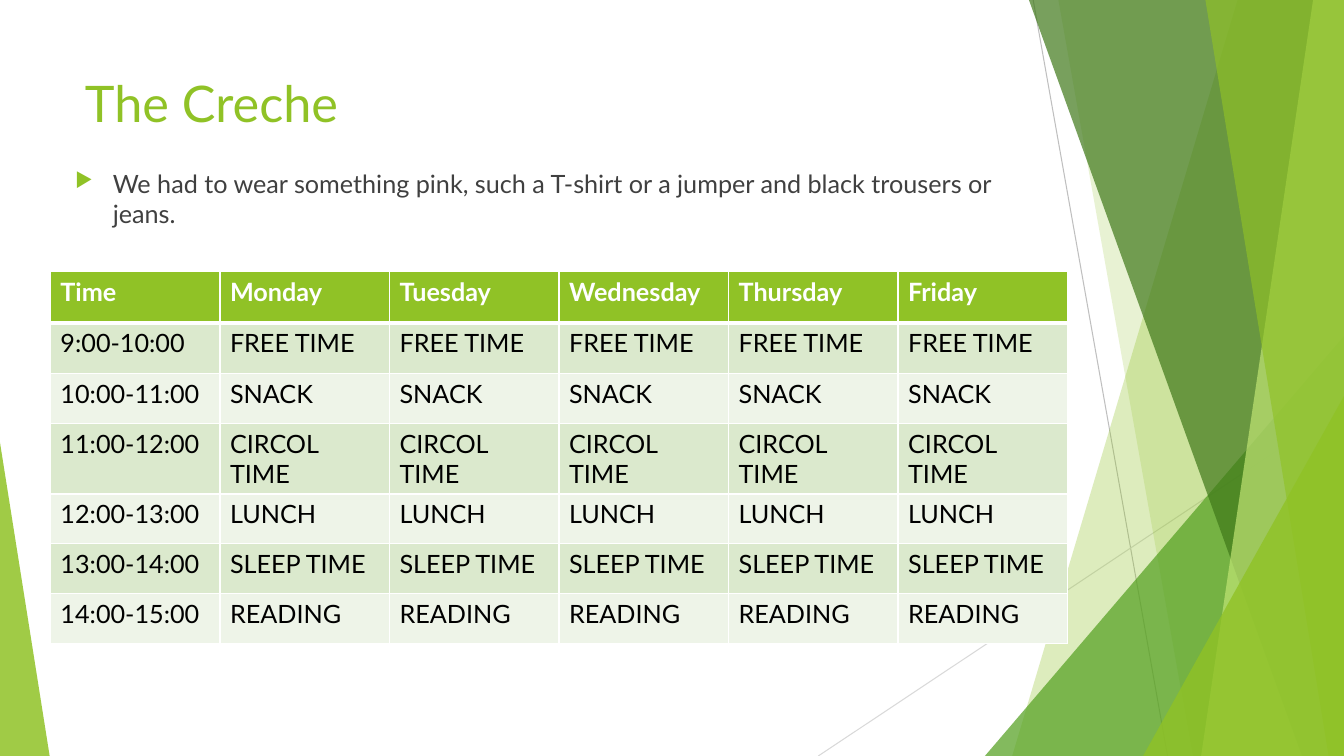
from lxml.etree import SubElement
from pptx import Presentation
from pptx.dml.color import RGBColor
from pptx.enum.shapes import MSO_CONNECTOR, MSO_SHAPE
from pptx.enum.text import MSO_ANCHOR, MSO_AUTO_SIZE, PP_ALIGN
from pptx.oxml.ns import qn
from pptx.util import Pt

FONT = "Lato"
WIDTH, HEIGHT = 960, 540

GREEN = RGBColor(0x90, 0xC2, 0x26)
MID_GREEN = RGBColor(0x54, 0xA0, 0x21)
DARK_GREEN = RGBColor(0x3F, 0x78, 0x19)
PALE_GREEN = RGBColor(0xC0, 0xE4, 0x74)
BAND_DARK = RGBColor(0xDB, 0xE9, 0xCD)
BAND_LIGHT = RGBColor(0xEE, 0xF4, 0xE8)
GREY = RGBColor(0xBF, 0xBF, 0xBF)
LIGHT_GREY = RGBColor(0xD9, 0xD9, 0xD9)
TEXT_GREY = RGBColor(0x40, 0x40, 0x40)
WHITE = RGBColor(0xFF, 0xFF, 0xFF)
BLACK = RGBColor(0, 0, 0)

DAYS = ["Monday", "Tuesday", "Wednesday", "Thursday", "Friday"]
ACTIVITIES = ["FREE TIME", "SNACK", "CIRCOL TIME", "LUNCH", "SLEEP TIME", "READING"]
FIRST_HOUR = 9
COLUMN_WIDTH = 121.1
ROW_HEIGHTS = [36.5, 36.5, 35.5, 41, 35.5, 35.5, 35.5]


def write(tf, text, size, color, bold=False):
    tf.word_wrap = True
    p = tf.paragraphs[0]
    p.alignment = PP_ALIGN.LEFT
    r = p.add_run()
    r.text = text
    font = {"name": FONT, "size": Pt(size), "bold": bold}
    for name, value in font.items():
        setattr(r.font, name, value)
    r.font.color.rgb = color
    return p


def paint(sp, color, opacity):
    sp.shadow.inherit = False
    sp.line.fill.background()
    sp.fill.solid()
    sp.fill.fore_color.rgb = color
    srgb = sp.fill._xPr.find(qn("a:solidFill"))[0]
    SubElement(srgb, qn("a:alpha"), val=str(opacity * 1000))


def add_line(s, start, end, color):
    line = s.shapes.add_connector(MSO_CONNECTOR.STRAIGHT, *map(Pt, start + end))
    line.line.color.rgb = color
    line.line.width = Pt(0.75)
    SubElement(line._element.spPr, qn("a:effectLst"))


def add_facet(s, top_x, bottom_x, color, opacity):
    """Band from a slanted left edge to the right side of the slide."""
    builder = s.shapes.build_freeform(top_x, 0, scale=Pt(1))
    builder.add_line_segments([(WIDTH, 0), (WIDTH, HEIGHT), (bottom_x, HEIGHT)])
    paint(builder.convert_to_shape(), color, opacity)


def add_corner(s, left, top, width, apex, color, opacity):
    """Triangle standing on the bottom of the slide."""
    sp = s.shapes.add_shape(MSO_SHAPE.ISOSCELES_TRIANGLE, Pt(left), Pt(top),
                            Pt(width), Pt(HEIGHT - top))
    sp.adjustments[0] = apex
    paint(sp, color, opacity)


def add_decoration(s):
    add_line(s, (738, 0), (834, HEIGHT), GREY)
    add_line(s, (WIDTH, 290), (584.5, HEIGHT), LIGHT_GREY)
    add_facet(s, 884, 723, GREEN, 30)
    add_facet(s, 756, 852, GREEN, 20)
    add_corner(s, 703.5, 240, 256.5, 1, MID_GREEN, 72)
    add_facet(s, 735, 929.5, DARK_GREEN, 70)
    add_facet(s, 938, 858, PALE_GREEN, 70)
    add_facet(s, 861, 949, GREEN, 65)
    add_corner(s, 816.5, 283, 143.5, 1, GREEN, 80)
    add_corner(s, 0, 316, 35.5, 0, GREEN, 85)


def add_title(s, text):
    title = s.shapes.title
    place = {"left": 53.5, "top": 48, "width": 677, "height": 104}
    for name, value in place.items():
        setattr(title, name, Pt(value))
    title.text_frame.auto_size = MSO_AUTO_SIZE.NONE
    title.text_frame.vertical_anchor = MSO_ANCHOR.TOP
    write(title.text_frame, text, 36, GREEN)


def add_bullet(s, text):
    box = s.shapes.add_textbox(Pt(46.5), Pt(116.5), Pt(677), Pt(305.5))
    p = write(box.text_frame, text, 18, TEXT_GREY)
    p.space_before = Pt(10)
    pPr = p._p.get_or_add_pPr()
    pPr.set("marL", str(Pt(27)))
    pPr.set("indent", str(-Pt(27)))
    SubElement(SubElement(pPr, qn("a:buClr")), qn("a:srgbClr"), val=str(GREEN))
    SubElement(pPr, qn("a:buSzPct"), val="80000")
    SubElement(pPr, qn("a:buChar"), char="▶")


def format_cell(cell, fill, bottom_width):
    tcPr = cell._tc.get_or_add_tcPr()
    widths = {"a:lnL": 1, "a:lnR": 1, "a:lnT": 1, "a:lnB": bottom_width}
    for tag, width in widths.items():
        ln = SubElement(tcPr, qn(tag), w=str(Pt(width)))
        SubElement(SubElement(ln, qn("a:solidFill")), qn("a:srgbClr"), val=str(WHITE))
    cell.fill.solid()
    cell.fill.fore_color.rgb = fill


def add_timetable(s):
    rows = [["Time"] + DAYS]
    for hour, activity in enumerate(ACTIVITIES, FIRST_HOUR):
        rows.append([f"{hour}:00-{hour + 1}:00"] + [activity] * len(DAYS))
    table = s.shapes.add_table(len(rows), len(rows[0]), Pt(36), Pt(194),
                               Pt(COLUMN_WIDTH * len(rows[0])),
                               Pt(sum(ROW_HEIGHTS))).table
    for column in table.columns:
        column.width = Pt(COLUMN_WIDTH)
    for i, texts in enumerate(rows):
        header = i == 0
        fill = GREEN if header else (BAND_LIGHT, BAND_DARK)[i % 2]
        table.rows[i].height = Pt(ROW_HEIGHTS[i])
        for j, text in enumerate(texts):
            cell = table.cell(i, j)
            format_cell(cell, fill, 3 if header else 1)
            write(cell.text_frame, text, 18, WHITE if header else BLACK, header)


def main():
    prs = Presentation()
    prs.slide_width, prs.slide_height = Pt(WIDTH), Pt(HEIGHT)
    s = prs.slides.add_slide(prs.slide_layouts[5])

    # Green facets at the slide edges
    add_decoration(s)

    # Heading and dress code
    add_title(s, "The Creche")
    add_bullet(s, "We had to wear something pink, such a T-shirt or a jumper "
                  "and black trousers or jeans.")

    # Weekly timetable
    add_timetable(s)

    prs.save("out.pptx")


if __name__ == "__main__":
    main()
